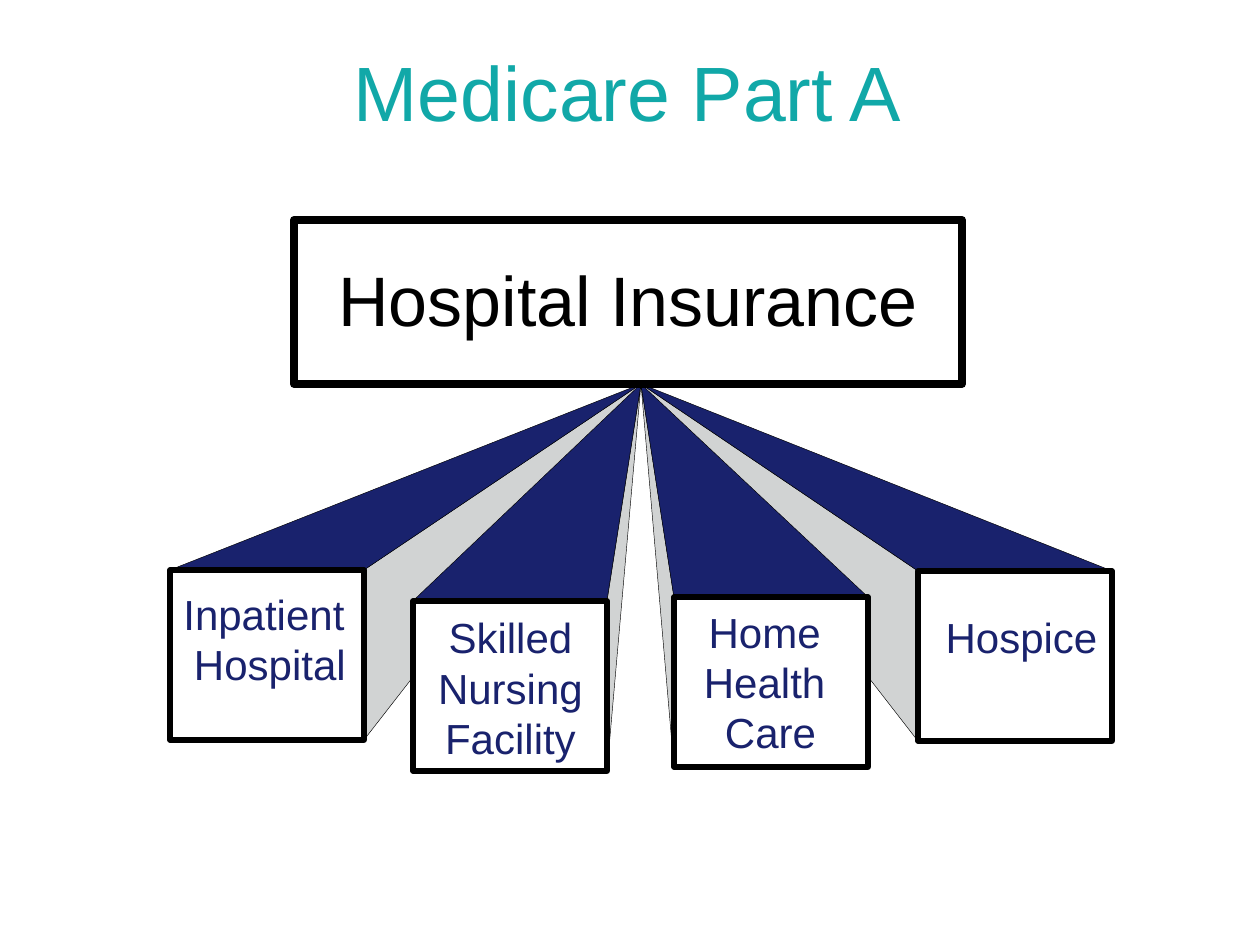
"""Build the Medicare Part A slide: one cover fanning out to four kinds of care."""
from pptx import Presentation
from pptx.dml.color import RGBColor
from pptx.enum.shapes import MSO_SHAPE
from pptx.enum.text import MSO_ANCHOR, PP_ALIGN
from pptx.util import Pt

RECTANGLE = MSO_SHAPE.RECTANGLE
CENTER = PP_ALIGN.CENTER
TOP, MIDDLE, BOTTOM = MSO_ANCHOR.TOP, MSO_ANCHOR.MIDDLE, MSO_ANCHOR.BOTTOM
PX = 914400 // 126

COLORS = {"teal": "11A8A8", "navy": "19226D", "gray": "D1D3D3",
          "white": "FFFFFF", "black": "000000"}
TITLE = ("Medicare Part A", (45, 52, 1166, 91))
COVER = ("Hospital Insurance", (294, 220, 668, 164))
APEX = (641, 384)
CARE_SIZE = (194, 170)
CARE = [
    {"lines": ["Hospice"], "corner": (918, 571), "label": (900, 603, 243, 233)},
    {"lines": ["Home ", "Health ", "Care"], "corner": (674, 597),
     "label": (649, 597, 243, 233)},
    {"lines": [" Inpatient ", " Hospital"], "corner": (170, 570),
     "label": (160, 579, 208, 233)},
    {"lines": ["Skilled", " Nursing ", "Facility"], "corner": (413, 601),
     "label": (372, 603, 277, 300)},
]
TITLE_FORMAT = {"size": Pt(44), "color": "teal"}
COVER_FORMAT = {"size": Pt(40), "color": "black"}
CARE_FORMAT = {"size": Pt(24), "color": "navy"}


def rgb(name):
    return RGBColor.from_string(COLORS[name])


def emu(values):
    return [value * PX for value in values]


def paint(shape, fill, width):
    shape.shadow.inherit = False
    shape.fill.solid()
    shape.fill.fore_color.rgb = rgb(fill)
    shape.line.color.rgb = rgb("black")
    shape.line.width = Pt(width)


def add_box(page, place, width):
    box = page.shapes.add_shape(RECTANGLE, *emu(place))
    paint(box, "white", width)
    return box


def add_triangle(page, first, second, fill):
    builder = page.shapes.build_freeform(*emu(first), scale=1.0)
    builder.add_line_segments([emu(APEX), emu(second)], close=True)
    paint(builder.convert_to_shape(), fill, 0.25)


def write(box, lines, text_format, anchor, margins, spacing=None):
    frame = box.text_frame
    frame.word_wrap = True
    frame.vertical_anchor = anchor
    for side, margin in zip(("left", "top", "right", "bottom"), emu(margins)):
        setattr(frame, f"margin_{side}", margin)
    for index, line in enumerate(lines):
        para = frame.add_paragraph() if index else frame.paragraphs[0]
        para.alignment = CENTER
        para.line_spacing = spacing
        span = para.add_run()
        span.text = line
        for name, value in {"name": "Arial", "size": text_format["size"]}.items():
            setattr(span.font, name, value)
        span.font.color.rgb = rgb(text_format["color"])


def add_care(page, item):
    left, top = item["corner"]
    width, height = CARE_SIZE
    inner = left if left > APEX[0] else left + width
    add_triangle(page, (inner, top), (inner, top + height), "gray")
    add_triangle(page, (left, top), (left + width, top), "navy")
    add_box(page, (left, top, width, height), 3)


def main():
    deck = Presentation()
    deck.slide_width, deck.slide_height = emu((1260, 945))
    page = deck.slides.add_slide(deck.slide_layouts[6])

    text, place = TITLE
    title = page.shapes.add_textbox(*emu(place))
    write(title, [text], TITLE_FORMAT, BOTTOM, (13, 6, 13, 6))

    for item in CARE:
        add_care(page, item)

    text, place = COVER
    cover = add_box(page, place, 4.5)
    write(cover, [text], COVER_FORMAT, MIDDLE, (13, 6, 13, 12))

    for item in CARE:
        label = page.shapes.add_textbox(*emu(item["label"]))
        write(label, item["lines"], CARE_FORMAT, TOP, (9, 9, 9, 9), Pt(28.8))

    deck.save("out.pptx")


if __name__ == "__main__":
    main()
